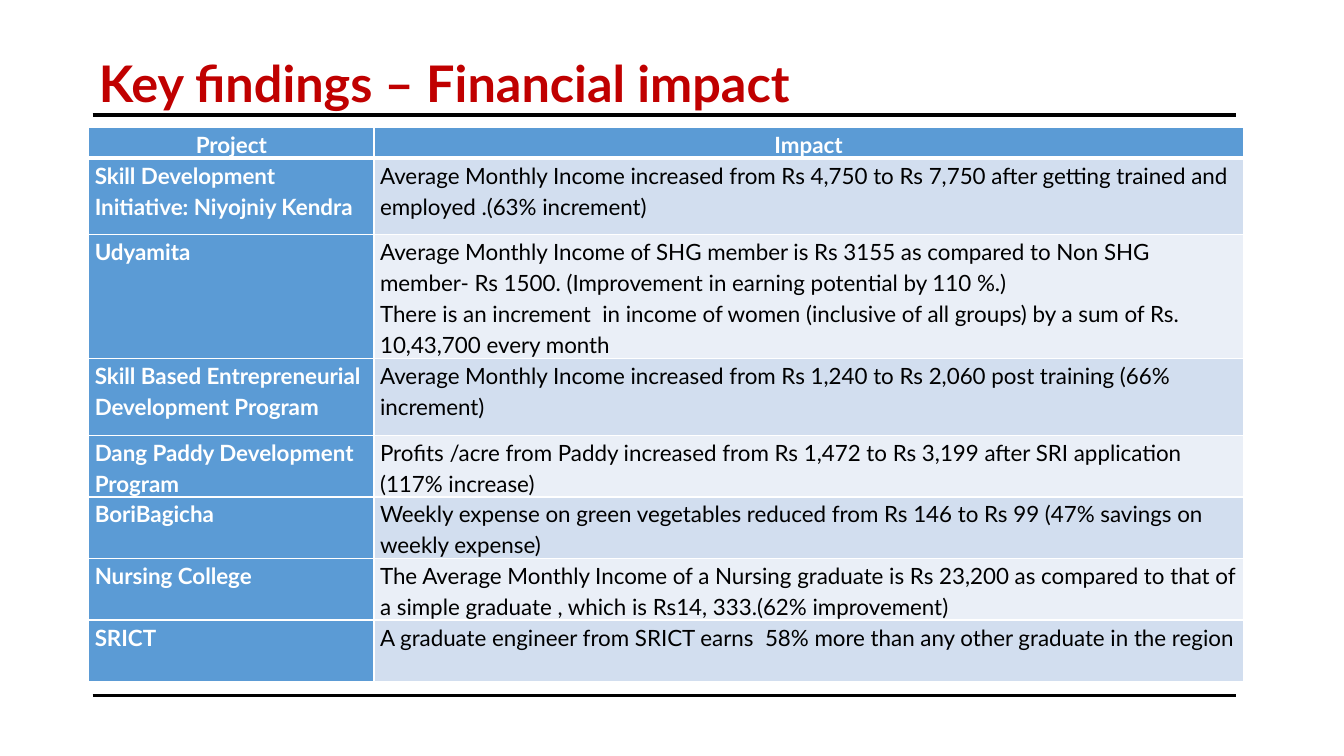
import pptx
import pptx.dml.color
import pptx.enum.shapes
import pptx.enum.text
import pptx.oxml.ns
import pptx.util
from lxml import etree
from pptx.util import Inches

COLORS = {"title": "C00000", "rule": "000000", "text": "000000", "white": "FFFFFF",
          "head": "5B9BD5", "odd": "D2DEEF", "even": "EAEFF7"}
FONT = "Lato"
COL_WIDTHS = [2.83, 8.62]
FINDINGS = [
    ("Project", "Impact", 0.31),
    ("Skill Development Initiative: Niyojniy Kendra",
     "Average Monthly Income increased from Rs 4,750 to Rs 7,750 after getting trained "
     "and employed .(63% increment)", 0.76),
    ("Udyamita",
     "Average Monthly Income of SHG member is Rs 3155 as compared to Non SHG member- "
     "Rs 1500. (Improvement in earning potential by 110 %.)\n"
     "There is an increment  in income of women (inclusive of all groups) by a sum of "
     "Rs. 10,43,700 every month", 1.23),
    ("Skill Based Entrepreneurial Development Program",
     "Average Monthly Income increased from Rs 1,240 to Rs 2,060 post training "
     "(66% increment)", 0.76),
    ("Dang Paddy Development Program",
     "Profits /acre from Paddy increased from Rs 1,472 to Rs 3,199 after SRI application "
     "(117% increase)", 0.61),
    ("BoriBagicha",
     "Weekly expense on green vegetables reduced from Rs 146 to Rs 99 "
     "(47% savings on weekly expense)", 0.61),
    ("Nursing College",
     "The Average Monthly Income of a Nursing graduate is Rs 23,200 as compared to that "
     "of a simple graduate , which is Rs14, 333.(62% improvement)", 0.61),
    ("SRICT",
     "A graduate engineer from SRICT earns  58% more than any other graduate in the region",
     0.61),
]


def rgb(name):
    return pptx.dml.color.RGBColor.from_string(COLORS[name])


def format_text(tf, size, color, bold, align):
    for p in tf.paragraphs:
        p.alignment = align
        p.line_spacing = 1.15
        for r in p.runs:
            r.font.name = FONT
            r.font.size = pptx.util.Pt(size)
            r.font.bold = bold
            r.font.color.rgb = rgb(color)


def add_title(s, text, x, y, w, h):
    sp = s.shapes.title
    sp.left, sp.top, sp.width, sp.height = Inches(x), Inches(y), Inches(w), Inches(h)
    tf = sp.text_frame
    tf.text = text
    tf.word_wrap = True
    tf.auto_size = pptx.enum.text.MSO_AUTO_SIZE.NONE
    tf.vertical_anchor = pptx.enum.text.MSO_ANCHOR.TOP
    format_text(tf, 36, "title", True, pptx.enum.text.PP_ALIGN.LEFT)


def add_rule(s, x, y, w, weight):
    line = s.shapes.add_connector(pptx.enum.shapes.MSO_CONNECTOR.STRAIGHT,
                                  Inches(x), Inches(y), Inches(x + w), Inches(y))
    line.line.color.rgb = rgb("rule")
    line.line.width = pptx.util.Pt(weight)
    etree.SubElement(line._element.spPr, pptx.oxml.ns.qn("a:effectLst"))


def add_borders(cell, top, bottom):
    tcPr = cell._tc.get_or_add_tcPr()
    for side, weight in (("L", 1), ("R", 1), ("T", top), ("B", bottom)):
        ln = etree.SubElement(tcPr, pptx.oxml.ns.qn(f"a:ln{side}"),
                              w=str(pptx.util.Pt(weight)))
        fill = etree.SubElement(ln, pptx.oxml.ns.qn("a:solidFill"))
        etree.SubElement(fill, pptx.oxml.ns.qn("a:srgbClr"), val=COLORS["white"])


def add_findings_table(s, x, y):
    height = sum(row[-1] for row in FINDINGS)
    table = s.shapes.add_table(len(FINDINGS), len(COL_WIDTHS), Inches(x), Inches(y),
                               Inches(sum(COL_WIDTHS)), Inches(height)).table
    for column, width in zip(table.columns, COL_WIDTHS):
        column.width = Inches(width)
    for i, (project, impact, row_height) in enumerate(FINDINGS):
        table.rows[i].height = Inches(row_height)
        for j, text in enumerate((project, impact)):
            cell = table.cell(i, j)
            is_head = i == 0 or j == 0
            cell.margin_left = cell.margin_right = Inches(0.06)
            cell.margin_top = cell.margin_bottom = 0
            add_borders(cell, 3 if i == 1 else 1, 3 if i == 0 else 1)
            cell.fill.solid()
            cell.fill.fore_color.rgb = rgb("head" if is_head else "odd" if i % 2 else "even")
            cell.text_frame.text = text
            align = pptx.enum.text.PP_ALIGN.LEFT if i else pptx.enum.text.PP_ALIGN.CENTER
            format_text(cell.text_frame, 16, "white" if is_head else "text", is_head, align)


def add_findings_slide(prs):
    s = prs.slides.add_slide(prs.slide_layouts[5])
    add_rule(s, 0.92, 1.14, 11.34, 3)
    add_rule(s, 0.92, 6.9, 11.34, 1.5)
    add_title(s, "Key findings – Financial impact", 0.88, 0.38, 11.3, 0.74)
    add_findings_table(s, 0.88, 1.26)


def main():
    prs = pptx.Presentation()
    prs.slide_width, prs.slide_height = Inches(13.33), Inches(7.5)
    add_findings_slide(prs)
    prs.save("out.pptx")


if __name__ == "__main__":
    main()
